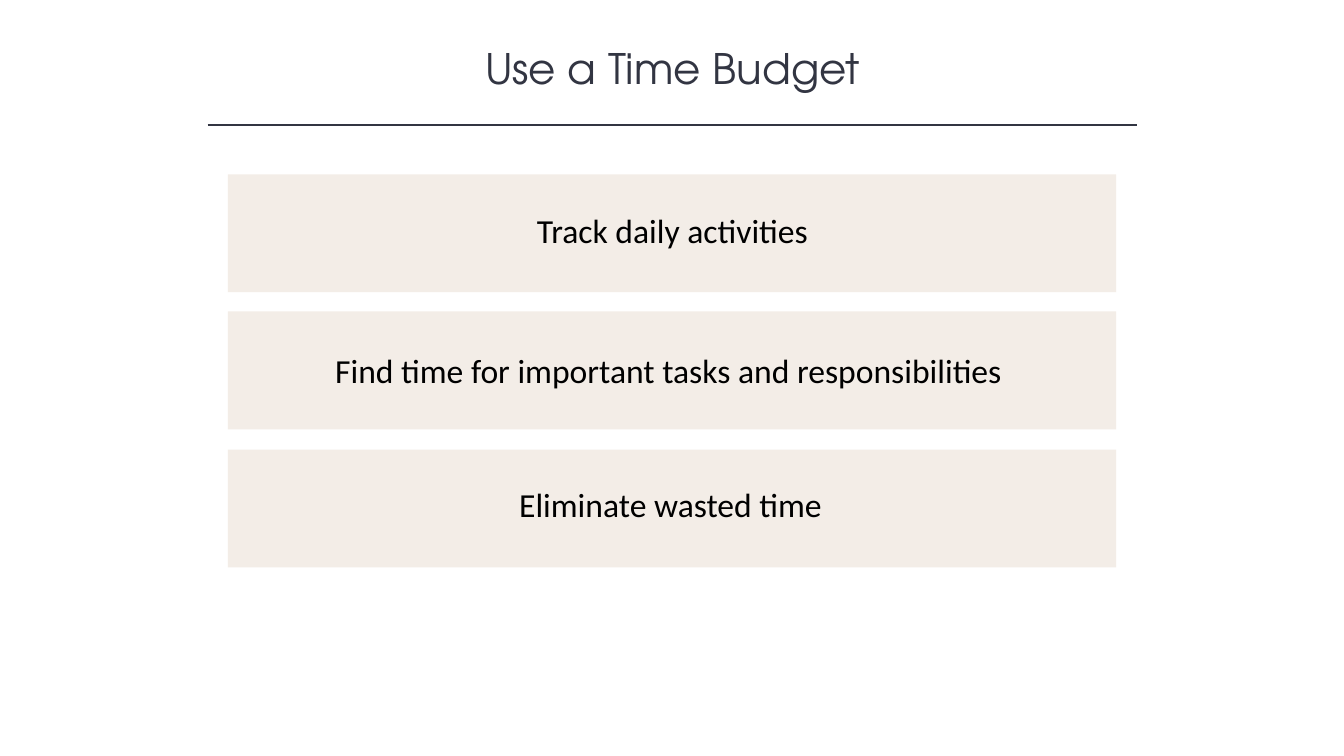
"""Build the time budget slide."""
from dataclasses import dataclass

from lxml import etree
from pptx import Presentation
from pptx.dml.color import RGBColor
from pptx.enum.shapes import MSO_CONNECTOR, MSO_SHAPE
from pptx.enum.text import MSO_ANCHOR, MSO_AUTO_SIZE, PP_ALIGN
from pptx.oxml.ns import qn
from pptx.shapes.autoshape import Shape
from pptx.slide import Slide
from pptx.util import Emu, Pt

RECT = MSO_SHAPE.RECTANGLE
STRAIGHT = MSO_CONNECTOR.STRAIGHT
TOP = MSO_ANCHOR.TOP
CENTER = PP_ALIGN.CENTER
FIXED = MSO_AUTO_SIZE.NONE

INK = RGBColor(0x32, 0x35, 0x42)
BLACK = RGBColor(0x00, 0x00, 0x00)
SAND = RGBColor(0xF3, 0xED, 0xE7)
HEAD_FONT = "TeX Gyre Adventor"
BODY_FONT = "Calibri"

SCALE = 9144
BAR_LEFT, BAR_WIDTH, BAR_HEIGHT = 226, 881, 117
TEXT_WIDTH, TEXT_HEIGHT = 854, 50


@dataclass
class Step:
    """One bar and the place of its label, in px."""
    text: str
    top: int
    text_left: int
    text_top: int


STEPS = [
    Step("Track daily activities", 173, 240, 203),
    Step("Find time for important tasks and responsibilities", 309, 236, 342),
    Step("Eliminate wasted time", 446, 238, 475),
]


def px(count: int) -> Emu:
    """Turn px into EMU."""
    return Emu(count * SCALE)


def write(shape: Shape, text: str, font: str, size: int, color: RGBColor) -> None:
    """Put one centred line of text at the top of a shape."""
    frame = shape.text_frame
    frame.text = text
    frame.word_wrap = True
    frame.auto_size = FIXED
    frame.vertical_anchor = TOP
    line = frame.paragraphs[0]
    line.alignment = CENTER
    line.line_spacing = 1.0
    line.space_before = Pt(0)
    face = line.runs[0].font
    face.name = font
    face.size = Pt(size)
    face.color.rgb = color


def add_rect(slide: Slide, left: int, top: int, width: int, height: int) -> Shape:
    """Add a plain sand rectangle."""
    rect = slide.shapes.add_shape(RECT, px(left), px(top), px(width), px(height))
    rect.shadow.inherit = False
    rect.fill.solid()
    rect.fill.fore_color.rgb = SAND
    rect.line.fill.background()
    return rect


def add_title(slide: Slide) -> None:
    """Place the title and the rule below it."""
    title = slide.shapes.title
    title.left, title.top = px(167), px(37)
    title.width, title.height = px(1000), px(61)
    write(title, "Use a Time Budget", HEAD_FONT, 30, INK)
    rule = slide.shapes.add_connector(STRAIGHT, px(206), px(124), px(1128), px(124))
    rule.line.color.rgb = INK
    rule.line.width = Pt(1)
    etree.SubElement(rule.element.spPr, qn("a:effectLst"))


def add_step(slide: Slide, step: Step) -> None:
    """Draw one bar with its label."""
    add_rect(slide, BAR_LEFT, step.top, BAR_WIDTH, BAR_HEIGHT)
    label = add_rect(slide, step.text_left, step.text_top, TEXT_WIDTH, TEXT_HEIGHT)
    write(label, step.text, BODY_FONT, 24, BLACK)


def main() -> None:
    """Build and save the deck."""
    deck = Presentation()
    deck.slide_width, deck.slide_height = px(1333), px(750)
    slide = deck.slides.add_slide(deck.slide_layouts[5])
    add_title(slide)
    for step in STEPS:
        add_step(slide, step)
    deck.save("out.pptx")


if __name__ == "__main__":
    main()
